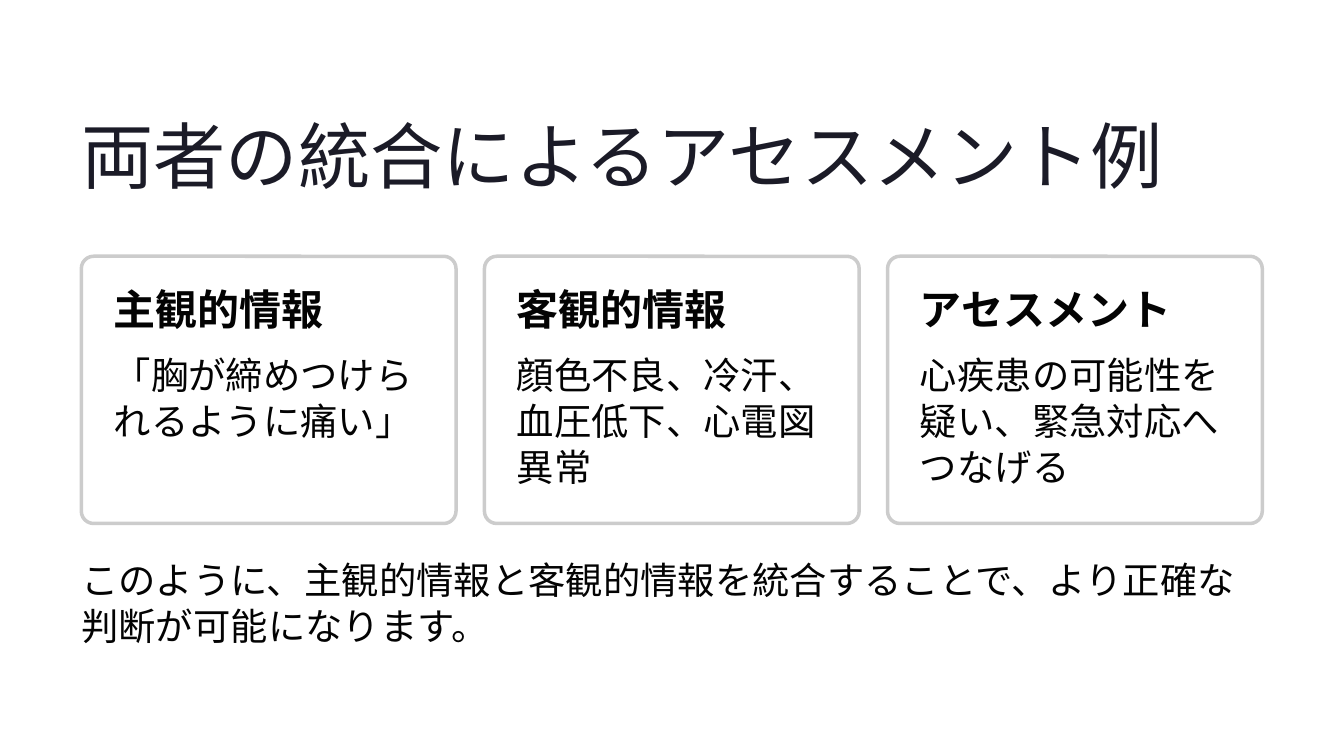
from pptx import Presentation
from pptx import util as u
from pptx.dml.color import RGBColor
from pptx.enum import shapes

WHITE = RGBColor(0xFF, 0xFF, 0xFF)
NAVY = RGBColor(0x1B, 0x1B, 0x27)
INK = RGBColor(0x03, 0x03, 0x03)
BORDER = RGBColor(0xCC, 0xCC, 0xCC)

LEFT, CARD_TOP = 2.46, 7.75
CARD_WIDTH, CARD_HEIGHT, CARD_STEP = 11.33, 8.08, 12.19
INSET = 0.98

CARDS = [
    ("主観的情報", "「胸が締めつけられるように痛い」", 2.82),
    ("客観的情報", "顔色不良、冷汗、血圧低下、心電図異常", 2.82),
    ("アセスメント", "心疾患の可能性を疑い、緊急対応へつなげる", 4.22),
]


def add_text(slide, wording, box, size, leading, font="Inter", color=INK, bold=False, wrap=False):
    """Add a text box without margins; box is left, top, width, height in cm."""
    frame = slide.shapes.add_textbox(*map(u.Cm, box)).text_frame
    frame.margin_left = frame.margin_top = frame.margin_right = frame.margin_bottom = 0
    frame.word_wrap = wrap
    paragraph = frame.paragraphs[0]
    paragraph.text = wording
    paragraph.line_spacing = u.Pt(leading)
    style = paragraph.runs[0].font
    style.name, style.size, style.bold = font, u.Pt(size), bold
    style.color.rgb = color


def add_body(slide, wording, box):
    """Add wrapped running text."""
    add_text(slide, wording, box, 32, 39.5, font="Cabin", wrap=True)


def add_card(slide, left, heading, detail, detail_height):
    """Add a rounded card with its heading and detail."""
    card = slide.shapes.add_shape(
        shapes.MSO_SHAPE.ROUNDED_RECTANGLE,
        *map(u.Cm, (left, CARD_TOP, CARD_WIDTH, CARD_HEIGHT)))
    card.adjustments[0] = 0.046
    card.shadow.inherit = False
    card.fill.solid()
    card.fill.fore_color.rgb = WHITE
    card.line.color.rgb = BORDER
    card.line.width = u.Pt(3)
    text_left, text_width = left + INSET, CARD_WIDTH - 2 * INSET
    add_text(slide, heading, (text_left, 8.74, text_width, 1.37), 36, 38.5, bold=True)
    add_body(slide, detail, (text_left, 10.62, text_width, detail_height))


def main():
    """Build and save the slide."""
    deck = Presentation()
    deck.slide_width, deck.slide_height = u.Cm(40.64), u.Cm(22.86)
    slide = deck.slides.add_slide(deck.slide_layouts[6])
    add_text(slide, "両者の統合によるアセスメント例", (LEFT, 3.25, 32.82, 2.74), 62, 77.5, color=NAVY)
    for column, (heading, detail, detail_height) in enumerate(CARDS):
        add_card(slide, LEFT + column * CARD_STEP, heading, detail, detail_height)
    add_body(slide, "このように、主観的情報と客観的情報を統合することで、より正確な判断が可能になります。",
             (LEFT, 16.81, 35.71, 2.82))
    deck.save("out.pptx")


if __name__ == "__main__":
    main()
